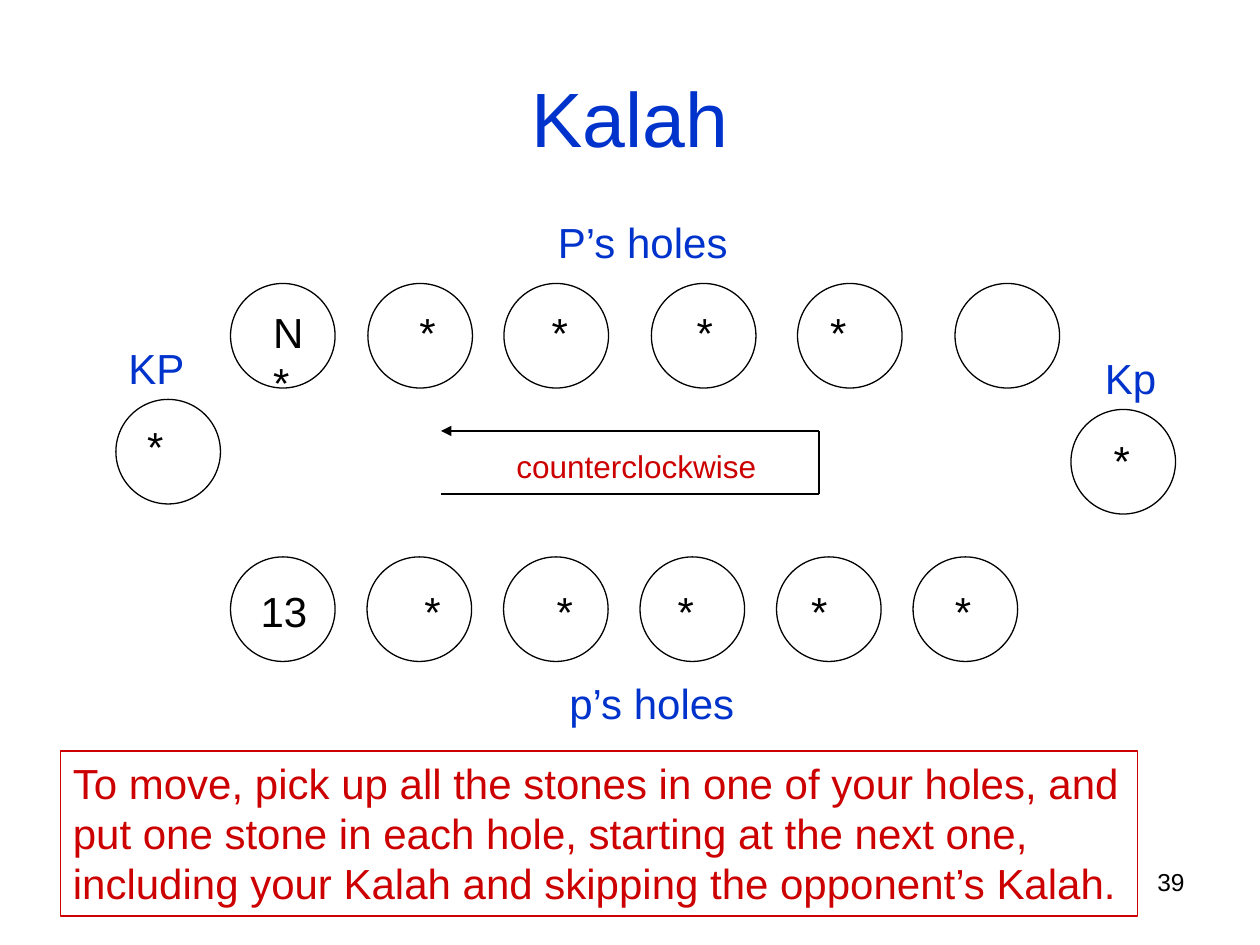
from dataclasses import dataclass

from lxml import etree
from pptx import Presentation
from pptx import util as u
from pptx.dml.color import RGBColor
from pptx.enum import shapes, text
from pptx.oxml.ns import qn


@dataclass(frozen=True)
class Theme:
    font: str = "Arial"
    black: RGBColor = RGBColor(0, 0, 0)
    blue: RGBColor = RGBColor(0x00, 0x33, 0xCC)
    red: RGBColor = RGBColor(0xCC, 0, 0)
    title: int = 44
    body: int = 24
    caption: int = 18
    number: int = 14
    line: float = 0.75
    leading: float = 1.2


T = Theme()
HOLE = 0.83
ALIGN = text.PP_ALIGN


def box(*lengths):
    return [u.Inches(v) for v in lengths]


def write(tf, lines, color, size=T.body, align=ALIGN.LEFT):
    for i, line in enumerate(lines):
        p = tf.paragraphs[0] if i == 0 else tf.add_paragraph()
        p.alignment = align
        p.line_spacing = u.Pt(size * T.leading)
        r = p.add_run()
        r.text = line
        r.font.name = T.font
        r.font.size = u.Pt(size)
        r.font.color.rgb = color


def add_title(s, title):
    sp = s.shapes.title
    sp.left, sp.top, sp.width, sp.height = box(0.5, 0.3, 9, 1.25)
    sp.text_frame.vertical_anchor = text.MSO_ANCHOR.MIDDLE
    write(sp.text_frame, [title], T.blue, T.title, ALIGN.CENTER)


def add_label(s, at, lines, color, size=T.body, align=ALIGN.LEFT, wrap=False):
    tf = s.shapes.add_textbox(*box(*at)).text_frame
    tf.word_wrap = wrap
    if not wrap:
        tf.auto_size = text.MSO_AUTO_SIZE.SHAPE_TO_FIT_TEXT
    write(tf, lines, color, size, align)
    return tf


def add_stones(s, at, lines, stops):
    tf = add_label(s, at, lines, T.black, wrap=True)
    tabs = etree.SubElement(tf.paragraphs[0]._p.get_or_add_pPr(), qn("a:tabLst"))
    for stop in stops:
        etree.SubElement(tabs, qn("a:tab"), pos=str(u.Inches(stop)), algn="l")


def add_outline(s, kind, at, color):
    sp = s.shapes.add_shape(kind, *box(*at))
    sp.shadow.inherit = False
    sp.fill.background()
    sp.line.color.rgb = color
    sp.line.width = u.Pt(T.line)
    return sp


def add_hole(s, left, top):
    add_outline(s, shapes.MSO_SHAPE.OVAL, (left, top, HOLE, HOLE), T.black)


def add_line(s, start, end, arrow=False):
    c = s.shapes.add_connector(shapes.MSO_CONNECTOR.STRAIGHT, *box(*start, *end))
    c.line.color.rgb = T.black
    c.line.width = u.Pt(T.line)
    if arrow:
        etree.SubElement(c.line._get_or_add_ln(), qn("a:tailEnd"), type="triangle")
    etree.SubElement(c._element.spPr, qn("a:effectLst"))


def add_rule(s, lines):
    sp = add_outline(s, shapes.MSO_SHAPE.RECTANGLE, (0.48, 5.96, 8.55, 1.31), T.red)
    tf = sp.text_frame
    tf.word_wrap = False
    tf.vertical_anchor = text.MSO_ANCHOR.TOP
    write(tf, lines, T.red)


def add_board(s):
    for left in (1.83, 2.92, 4, 5.17, 6.33, 7.58):
        add_hole(s, left, 2.25)
    for i in range(6):
        add_hole(s, 1.83 + i * 6.5 / 6, 4.42)
    for left, top in ((0.92, 3.17), (8.5, 3.25)):
        add_hole(s, left, top)

    for label, at in (("P’s holes", (4.33, 1.67, 1.56, 0.5)),
                      ("p’s holes", (4.42, 5.33, 1.52, 0.5)),
                      ("KP", (0.92, 2.67, 0.65, 0.5)),
                      ("Kp", (8.67, 2.75, 0.61, 0.5))):
        add_label(s, at, [label], T.blue)

    add_stones(s, (2.07, 2.38, 5.97, 0.9), ["N\t*\t*\t*\t*", "*"],
               (1.16, 2.21, 3.36, 4.42))
    add_stones(s, (1.97, 4.6, 5.9, 0.5), ["13\t*\t*\t*\t*\t*"],
               (1.3, 2.35, 3.31, 4.37, 5.51))
    for left, top in ((1.07, 3.29), (8.74, 3.4)):
        add_label(s, (left, top, 0.33, 0.5), ["*"], T.black)


def add_direction(s):
    left, right, top, bottom = 3.5, 6.5, 3.42, 3.92
    add_line(s, (right, bottom), (left, bottom))
    add_line(s, (right, bottom), (right, top))
    add_line(s, (right, top), (left, top), arrow=True)
    add_label(s, (4, 3.5, 2.25, 0.4), ["counterclockwise"], T.red, T.caption,
              wrap=True)


def main():
    prs = Presentation()
    prs.slide_width, prs.slide_height = box(10, 7.5)
    s = prs.slides.add_slide(prs.slide_layouts[5])
    add_title(s, "Kalah")
    add_board(s)
    add_direction(s)
    add_rule(s, ["To move, pick up all the stones in one of your holes, and",
                 "put one stone in each hole, starting at the next one,",
                 "including your Kalah and skipping the opponent’s Kalah."])
    add_label(s, (7.17, 6.83, 2.33, 0.52), ["39"], T.black, T.number,
              ALIGN.RIGHT, wrap=True)
    prs.save("out.pptx")


if __name__ == "__main__":
    main()
